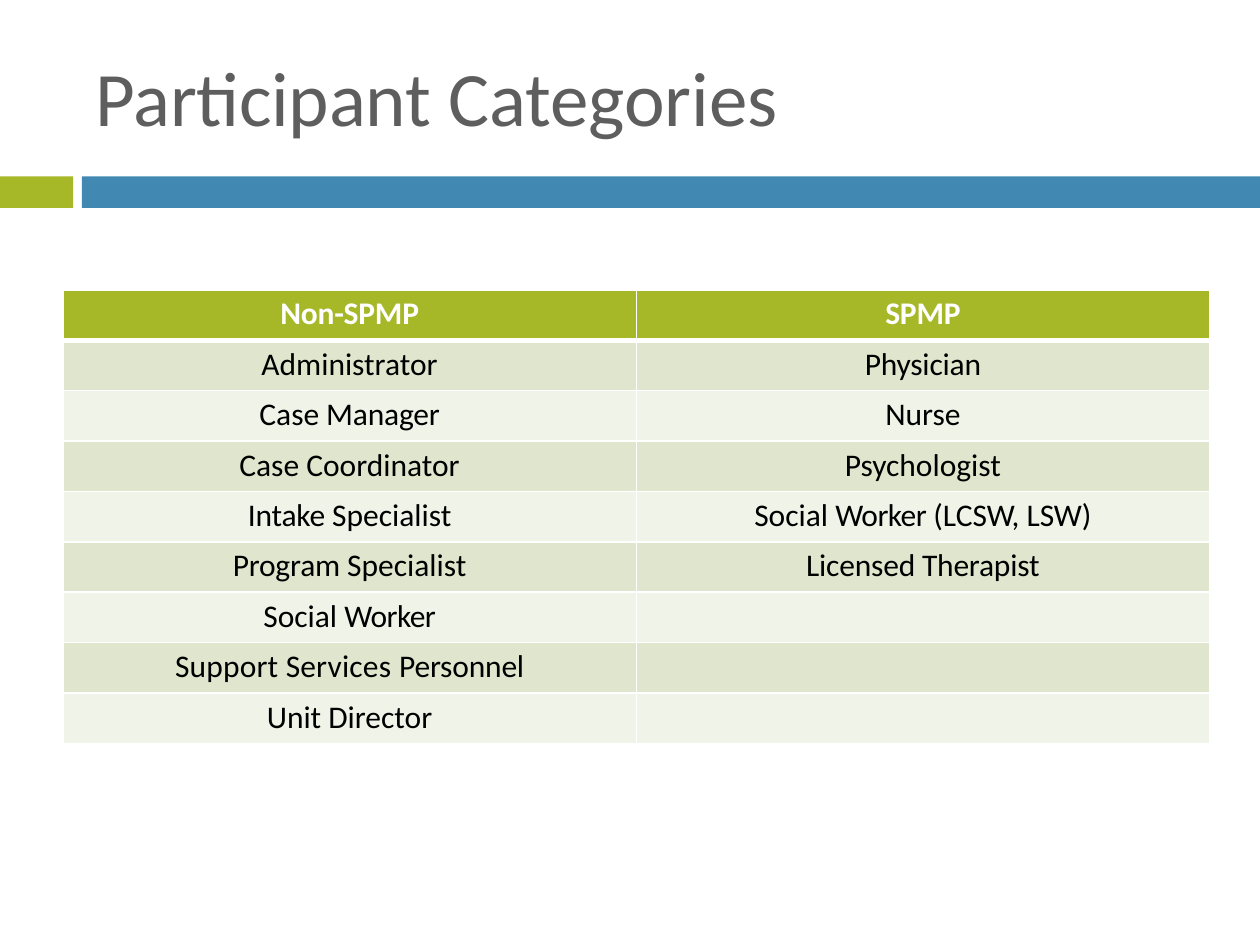
"""Build the Participant Categories slide."""
from lxml.etree import SubElement
from pptx import Presentation
from pptx.dml.color import RGBColor
from pptx.enum.shapes import MSO_SHAPE
from pptx.enum.text import MSO_ANCHOR, PP_ALIGN
from pptx.oxml.ns import qn
from pptx.util import Inches, Pt

COLORS = {
    "green": "A6B727",
    "blue": "4189B3",
    "band_dark": "E0E6CD",
    "band_light": "F0F3E8",
    "title": "5E5E5E",
    "white": "FFFFFF",
    "black": "000000",
}
FONT = "Calibri"
ROW_HEIGHT = 0.4
COLUMN_WIDTH = 4.55

TITLE = [("Participant ", -0.2), ("Categories", 0)]
HEADER = [[("Non-SPMP", -0.1)], [("SPMP", -0.1)]]
ROLES = [
    [[("Administrator", 0)], [("Physician", -0.1)]],
    [[("Case", 0), (" Manager", -0.1)], [("Nurse", 0)]],
    [[("Case Coordinator", 0)], [("Psychologist", 0)]],
    [[("Intake ", -0.1), ("Specialist", 0)],
     [("Social ", 0), ("Worker ", -0.3), ("(LCSW, LSW)", 0)]],
    [[("Program ", -0.1), ("Specialist", 0)], [("Licensed Therapist", -0.1)]],
    [[("Social ", 0), ("Worker", -0.3)], []],
    [[("Support Services ", 0.1), ("Personnel", -0.1)], []],
    [[("Unit Director", 0)], []],
]


def rgb(name):
    return RGBColor.from_string(COLORS[name])


def add_runs(p, runs, size, color, bold=False):
    for text, spacing in runs:
        r = p.add_run()
        r.text = text
        r.font.name = FONT
        r.font.size = Pt(size)
        r.font.bold = bold
        r.font.color.rgb = rgb(color)
        if spacing:
            r.font._element.set("spc", str(round(spacing * 100)))


def set_margins(box, top):
    box.margin_left = box.margin_right = box.margin_bottom = 0
    box.margin_top = Inches(top)


def add_bar(slide, left, width, color):
    sp = slide.shapes.add_shape(
        MSO_SHAPE.RECTANGLE, Inches(left), Inches(1.4), Inches(width), Inches(0.25))
    sp.shadow.inherit = False
    sp.fill.solid()
    sp.fill.fore_color.rgb = rgb(color)
    sp.line.fill.background()


def add_title(slide):
    sp = slide.shapes.title
    sp.left, sp.top = Inches(0.76), Inches(0.38)
    sp.width, sp.height = Inches(5.46), Inches(0.76)
    tf = sp.text_frame
    tf.word_wrap = True
    tf.vertical_anchor = MSO_ANCHOR.TOP
    set_margins(tf, 0.01)
    p = tf.paragraphs[0]
    p.alignment = PP_ALIGN.LEFT
    add_runs(p, TITLE, 44, "title")


def set_borders(cell, **widths):
    tc_pr = cell._tc.get_or_add_tcPr()
    for side in "LRTB":
        ln = SubElement(tc_pr, qn(f"a:ln{side}"), w=str(Pt(widths.get(side, 1))))
        fill = SubElement(ln, qn("a:solidFill"))
        SubElement(fill, qn("a:srgbClr"), val=COLORS["white"])


def fill_row(row, contents, fill, color="black", bold=False, **borders):
    row.height = Inches(ROW_HEIGHT)
    for cell, runs in zip(row.cells, contents):
        set_margins(cell, 0.04)
        set_borders(cell, **borders)
        cell.fill.solid()
        cell.fill.fore_color.rgb = rgb(fill)
        p = cell.text_frame.paragraphs[0]
        p.alignment = PP_ALIGN.CENTER
        add_runs(p, runs, 18, color, bold)


def add_categories(slide):
    count = len(ROLES) + 1
    table = slide.shapes.add_table(
        count, 2, Inches(0.5), Inches(2.3),
        Inches(2 * COLUMN_WIDTH), Inches(count * ROW_HEIGHT)).table
    for column in table.columns:
        column.width = Inches(COLUMN_WIDTH)
    fill_row(table.rows[0], HEADER, "green", "white", True, B=3)
    for i, contents in enumerate(ROLES):
        fill = "band_light" if i % 2 else "band_dark"
        fill_row(table.rows[i + 1], contents, fill, T=1 if i else 3)


def main():
    prs = Presentation()
    prs.slide_width, prs.slide_height = Inches(10), Inches(7.5)
    slide = prs.slides.add_slide(prs.slide_layouts[5])
    add_bar(slide, 0, 0.58, "green")
    add_bar(slide, 0.65, 9.35, "blue")
    add_categories(slide)
    add_title(slide)
    prs.save("out.pptx")


if __name__ == "__main__":
    main()
